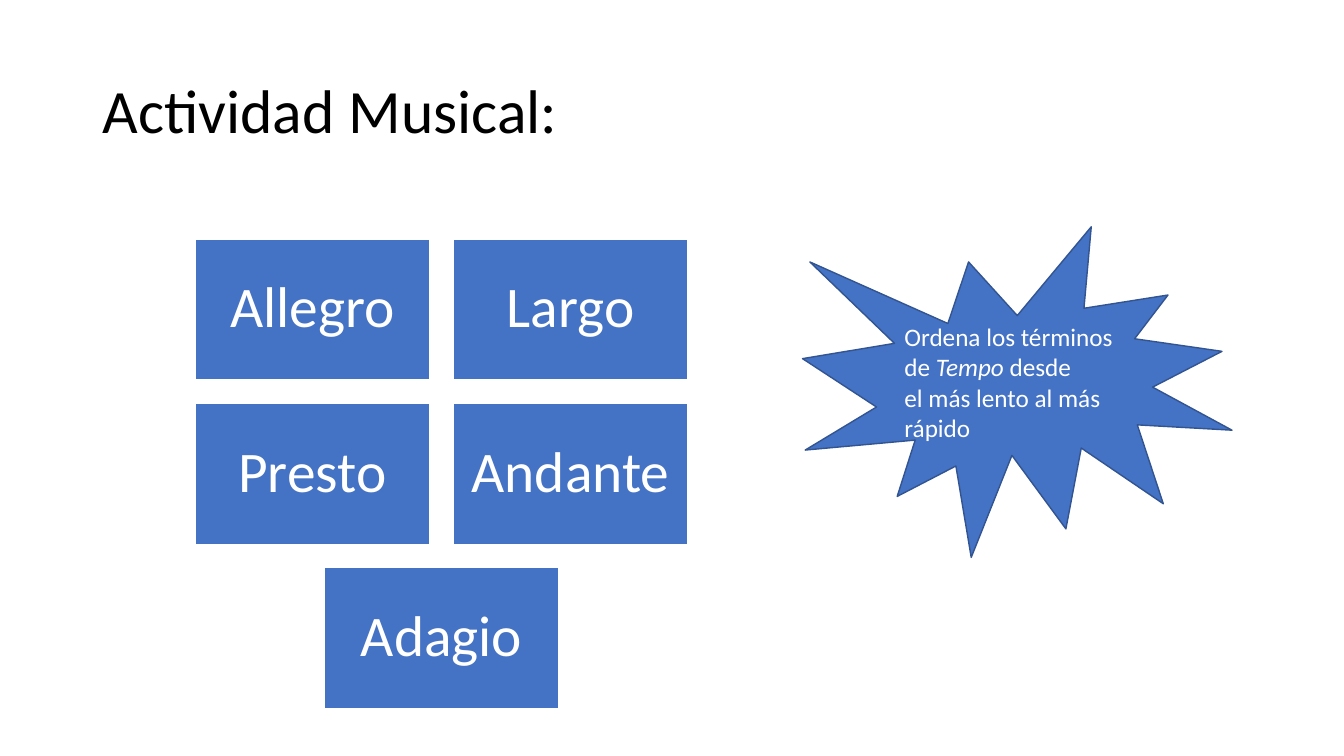
import dataclasses

import pptx
import pptx.dml.color
import pptx.enum.shapes
import pptx.enum.text
import pptx.util

SHAPE = pptx.enum.shapes.MSO_SHAPE
ALIGN = pptx.enum.text.PP_ALIGN
inches = pptx.util.Inches


@dataclasses.dataclass(frozen=True)
class Theme:
    font: str = "Calibri"
    ink: str = "000000"
    paper: str = "FFFFFF"
    accent: str = "4472C4"
    outline: str = "325491"
    title_size: int = 44
    tile_size: int = 41
    note_size: int = 18


@dataclasses.dataclass(frozen=True)
class TileGrid:
    center: float = 4.38
    top: float = 2.37
    width: float = 2.33
    height: float = 1.4
    gap: float = 0.23


THEME = Theme()
GRID = TileGrid()
TEMPO_ROWS = [["Allegro", "Largo"], ["Presto", "Andante"], ["Adagio"]]
# Each paragraph is a list of (text, italic) runs.
NOTE = [
    [("Ordena los términos de ", False), ("Tempo ", True), ("desde", False)],
    [("el más lento al más rápido", False)],
]


def rgb(value):
    return pptx.dml.color.RGBColor.from_string(value)


def write(sp, paragraphs, size, color, align=ALIGN.LEFT, spacing=1.0):
    tf = sp.text_frame
    tf.word_wrap = True
    tf.vertical_anchor = pptx.enum.text.MSO_ANCHOR.MIDDLE
    for i, runs in enumerate(paragraphs):
        p = tf.add_paragraph() if i else tf.paragraphs[0]
        p.alignment = align
        p.line_spacing = spacing
        for text, italic in runs:
            r = p.add_run()
            r.text = text
            r.font.name = THEME.font
            r.font.size = pptx.util.Pt(size)
            r.font.color.rgb = rgb(color)
            r.font.italic = italic


def add_title(slide, text):
    sp = slide.shapes.add_textbox(*map(inches, (0.92, 0.4, 11.5, 1.45)))
    write(sp, [[(text, False)]], THEME.title_size, THEME.ink, spacing=0.9)


def add_filled(slide, kind, box, line):
    sp = slide.shapes.add_shape(kind, *map(inches, box))
    sp.shadow.inherit = False
    sp.fill.solid()
    sp.fill.fore_color.rgb = rgb(THEME.accent)
    sp.line.color.rgb = rgb(line)
    sp.line.width = pptx.util.Pt(1)
    return sp


def add_tile(slide, text, left, top):
    box = (left, top, GRID.width, GRID.height)
    sp = add_filled(slide, SHAPE.RECTANGLE, box, THEME.paper)
    tf = sp.text_frame
    tf.margin_left = tf.margin_right = inches(0.17)
    tf.margin_top = tf.margin_bottom = inches(0.17)
    write(sp, [[(text, False)]], THEME.tile_size, THEME.paper, ALIGN.CENTER, 0.9)


def add_tiles(slide, rows):
    """Stack the rows of tiles, each row centred on the grid's axis."""
    step_x, step_y = GRID.width + GRID.gap, GRID.height + GRID.gap
    for row, names in enumerate(rows):
        left = GRID.center - (len(names) * step_x - GRID.gap) / 2
        for col, name in enumerate(names):
            add_tile(slide, name, left + col * step_x, GRID.top + row * step_y)


def add_burst(slide, paragraphs):
    sp = add_filled(slide, SHAPE.EXPLOSION1, (7.96, 2.25, 4.26, 3.28), THEME.outline)
    write(sp, paragraphs, THEME.note_size, THEME.paper)


def main():
    prs = pptx.Presentation()
    prs.slide_width, prs.slide_height = inches(13.33), inches(7.5)
    slide = prs.slides.add_slide(prs.slide_layouts[6])
    add_title(slide, "Actividad Musical:")
    add_tiles(slide, TEMPO_ROWS)
    add_burst(slide, NOTE)
    prs.save("out.pptx")


if __name__ == "__main__":
    main()
